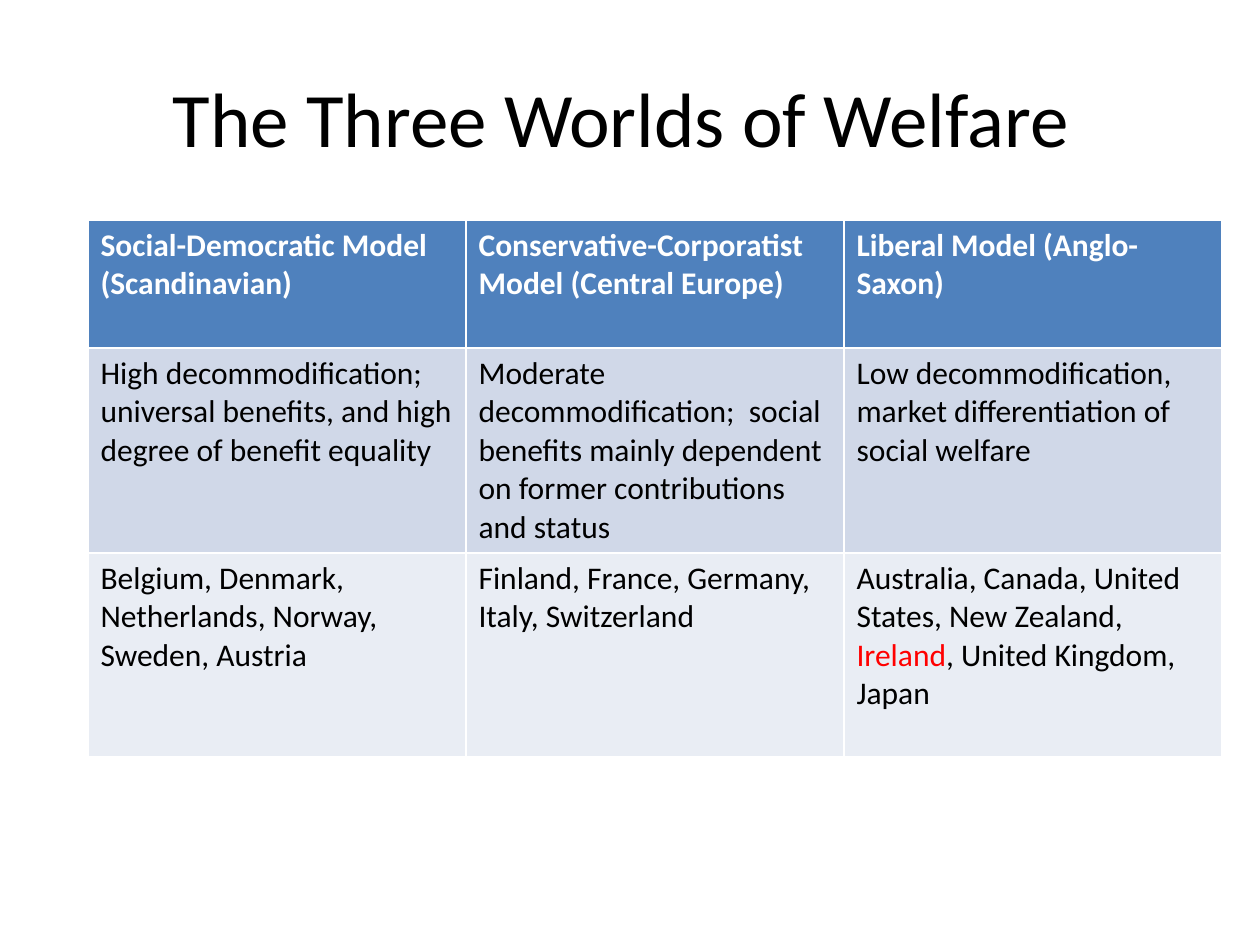
"""Build a slide that compares the three worlds of welfare in a table."""
import pptx
import pptx.dml.color
import pptx.enum.text
import pptx.util

TITLE = "The Three Worlds of Welfare "
MODELS = [
    "Social-Democratic Model (Scandinavian)",
    "Conservative-Corporatist Model (Central Europe)",
    "Liberal Model (Anglo-Saxon)",
]
FEATURES = [
    "High decommodification; universal benefits, and high degree of benefit equality",
    "Moderate decommodification;  social benefits mainly dependent on former contributions and status",
    "Low decommodification, market differentiation of social welfare",
]
COUNTRIES = [
    "Belgium, Denmark,\nNetherlands, Norway, Sweden, Austria",
    "Finland, France, Germany, Italy, Switzerland",
    "Australia, Canada, United States, New Zealand, Ireland, United Kingdom, Japan",
]
HIGHLIGHT = "Ireland"
THEME = {
    "font": "Calibri", "title_size": 44, "table_size": 18,
    "text": "000000", "header_text": "FFFFFF", "highlight": "FF0000",
    "header": "4F81BD", "features": "D0D8E8", "countries": "E9EDF4",
}
ROWS = [
    (MODELS, 128, "header", "header_text"),
    (FEATURES, 205, "features", "text"),
    (COUNTRIES, 204, "countries", "text"),
]
SLIDE_SIZE = (1260, 945)
TITLE_BOX = (63, 38, 1134, 157)
TABLE_LEFT, TABLE_TOP, COLUMN_WIDTH = 88, 220, 378
PX_PER_INCH = 126


def px(length):
    return pptx.util.Emu(round(length * 914400 / PX_PER_INCH))


def color(role):
    return pptx.dml.color.RGBColor.from_string(THEME[role])


def style(paragraph, size, role, bold=False):
    paragraph.font.name = THEME["font"]
    paragraph.font.size = pptx.util.Pt(THEME[size])
    paragraph.font.bold = bold
    paragraph.font.color.rgb = color(role)


def write(paragraph, line, role, bold):
    style(paragraph, "table_size", role, bold)
    before, found, after = line.partition(HIGHLIGHT)
    for words in filter(None, (before, found, after)):
        run = paragraph.add_run()
        run.text = words
        if words == HIGHLIGHT:
            run.font.color.rgb = color("highlight")


def add_title(slide):
    title = slide.shapes.title
    title.left, title.top, title.width, title.height = map(px, TITLE_BOX)
    title.text_frame.text = TITLE
    title.text_frame.vertical_anchor = pptx.enum.text.MSO_ANCHOR.MIDDLE
    heading = title.text_frame.paragraphs[0]
    heading.alignment = pptx.enum.text.PP_ALIGN.CENTER
    style(heading, "title_size", "text")


def add_comparison(slide):
    width = COLUMN_WIDTH * len(MODELS)
    height = sum(row[1] for row in ROWS)
    comparison = slide.shapes.add_table(
        len(ROWS), len(MODELS), px(TABLE_LEFT), px(TABLE_TOP), px(width), px(height)
    ).table
    for column in comparison.columns:
        column.width = px(COLUMN_WIDTH)
    for row, (entries, row_height, fill, role) in zip(comparison.rows, ROWS):
        row.height = px(row_height)
        for cell, entry in zip(row.cells, entries):
            cell.fill.solid()
            cell.fill.fore_color.rgb = color(fill)
            frame = cell.text_frame
            for index, line in enumerate(entry.split("\n")):
                paragraph = frame.add_paragraph() if index else frame.paragraphs[0]
                write(paragraph, line, role, entries is MODELS)


def main():
    deck = pptx.Presentation()
    deck.slide_width, deck.slide_height = map(px, SLIDE_SIZE)
    slide = deck.slides.add_slide(deck.slide_layouts.get_by_name("Title Only"))
    add_title(slide)
    add_comparison(slide)
    deck.save("out.pptx")


if __name__ == "__main__":
    main()
